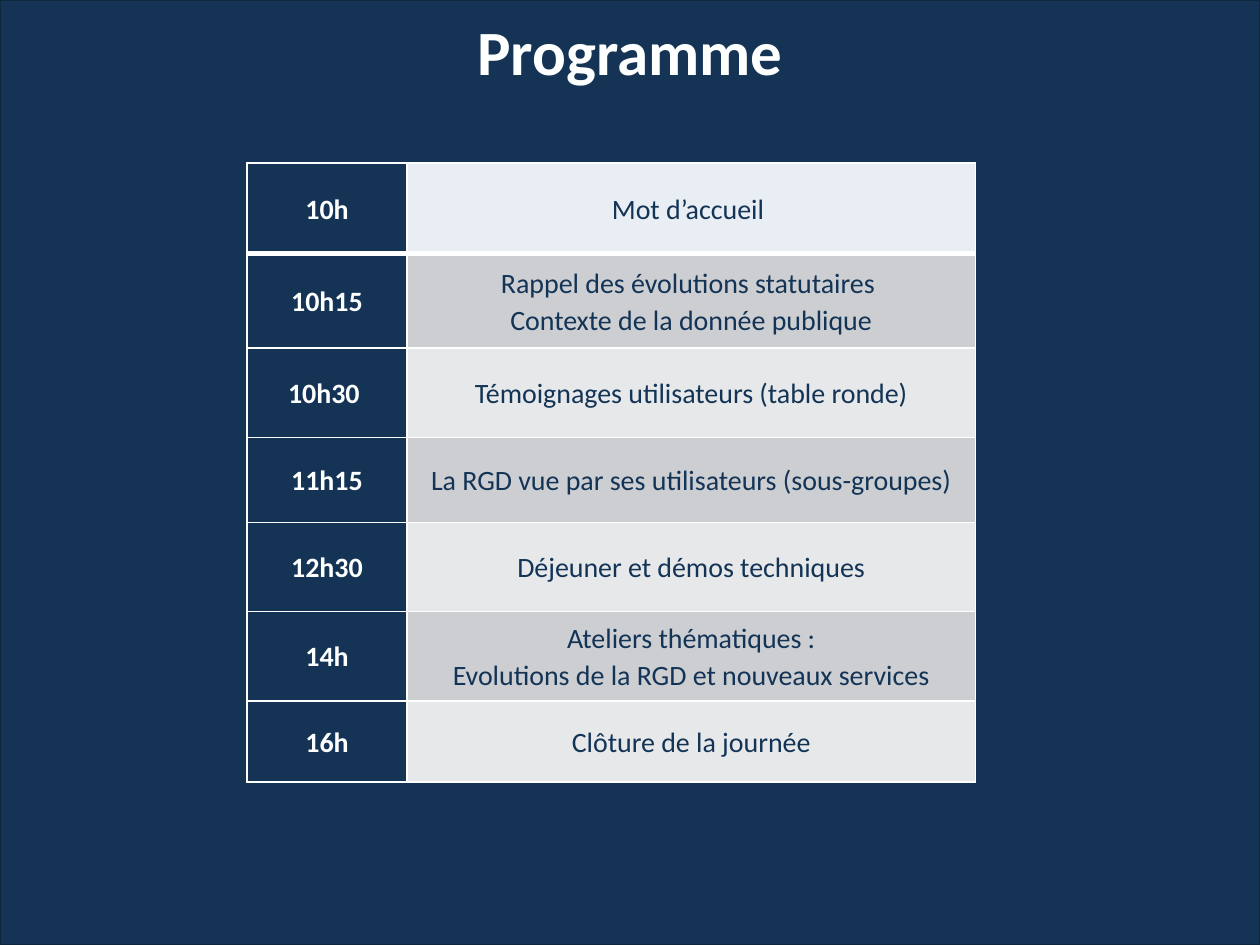
"""Build the "Programme" slide: a title above the schedule of the day."""
from dataclasses import dataclass

import lxml.etree
import pptx
import pptx.dml.color
import pptx.enum.shapes
import pptx.enum.text
import pptx.oxml.ns
import pptx.table
import pptx.text.text
import pptx.util

NAVY, WHITE, TEXT = "143355", "FEFFFF", "133456"
FIRST, DARK, LIGHT = "E9EDF4", "CCCED1", "E7E8E9"
Pt = pptx.util.Pt


@dataclass
class Session:
    time: str
    topic: str
    height: float


SESSIONS = [
    Session("10h", "Mot d’accueil ", 52),
    Session("10h15", "Rappel des évolutions statutaires \nContexte de la donnée publique", 54),
    Session("10h30 ", "Témoignages utilisateurs (table ronde)", 51),
    Session("11h15", "La RGD vue par ses utilisateurs (sous-groupes)", 48.5),
    Session("12h30", "Déjeuner et démos techniques", 51),
    Session("14h", "Ateliers thématiques :\nEvolutions de la RGD et nouveaux services", 51),
    Session("16h", "Clôture de la journée", 46.5),
]


def rgb(color: str) -> pptx.dml.color.RGBColor:
    return pptx.dml.color.RGBColor.from_string(color)


def format_text(tf: pptx.text.text.TextFrame, size: float, color: str, bold: bool,
                spacing: float = 1.0) -> None:
    for p in tf.paragraphs:
        p.alignment = pptx.enum.text.PP_ALIGN.CENTER
        p.line_spacing = spacing
        for r in p.runs:
            r.font.name, r.font.size, r.font.bold = "Calibri", Pt(size), bold
            r.font.color.rgb = rgb(color)


def add_border(cell: pptx.table._Cell, side: str, width: float) -> None:
    qn = pptx.oxml.ns.qn
    tcPr = cell._tc.get_or_add_tcPr()
    ln = lxml.etree.SubElement(tcPr, qn(f"a:ln{side}"), w=str(Pt(width)))
    fill = lxml.etree.SubElement(ln, qn("a:solidFill"))
    lxml.etree.SubElement(fill, qn("a:srgbClr"), val=WHITE)


def fill_cell(cell: pptx.table._Cell, text: str, fill: str, color: str, bold: bool,
              top: float, bottom: float) -> None:
    cell.text_frame.text = text
    format_text(cell.text_frame, 16, color, bold, 1.07)
    cell.vertical_anchor = pptx.enum.text.MSO_ANCHOR.MIDDLE
    cell.margin_left = cell.margin_right = Pt(3.6)
    cell.margin_top = cell.margin_bottom = 0
    for side, width in (("L", 1), ("R", 1), ("T", top), ("B", bottom)):
        add_border(cell, side, width)
    cell.fill.solid()
    cell.fill.fore_color.rgb = rgb(fill)


def add_schedule(s: pptx.slide.Slide, sessions: list[Session]) -> None:
    height = sum(session.height for session in sessions)
    table = s.shapes.add_table(len(sessions), 2, Pt(141.25), Pt(93), Pt(416.25),
                               Pt(height)).table
    table.first_row = table.horz_banding = False
    for column, width in zip(table.columns, (91.25, 325)):
        column.width = Pt(width)
    for i, session in enumerate(sessions):
        table.rows[i].height = Pt(session.height)
        top, bottom = 3 if i == 1 else 1, 3 if i == 0 else 1
        fill = FIRST if i == 0 else DARK if i % 2 else LIGHT
        fill_cell(table.cell(i, 0), session.time, NAVY, WHITE, True, top, bottom)
        fill_cell(table.cell(i, 1), session.topic, fill, TEXT, False, top, bottom)


def main() -> None:
    prs = pptx.Presentation()
    prs.slide_width, prs.slide_height = Pt(720), Pt(540)
    s = prs.slides.add_slide(prs.slide_layouts[5])
    s.background.fill.solid()
    s.background.fill.fore_color.rgb = rgb(WHITE)

    title = s.shapes.title
    title.left, title.top, title.width, title.height = 0, 0, Pt(720), Pt(57)
    title.text_frame.text = "Programme"
    title.text_frame.vertical_anchor = pptx.enum.text.MSO_ANCHOR.MIDDLE
    format_text(title.text_frame, 36, WHITE, True)

    panel = s.shapes.add_shape(pptx.enum.shapes.MSO_SHAPE.RECTANGLE, 0, 0,
                               prs.slide_width, prs.slide_height)
    panel.shadow.inherit = False
    panel.fill.solid()
    panel.fill.fore_color.rgb = rgb(NAVY)
    panel.line.color.rgb = rgb("0F263F")
    panel.line.width = Pt(1)
    title.element.addprevious(panel.element)

    add_schedule(s, SESSIONS)
    prs.save("out.pptx")


if __name__ == "__main__":
    main()
